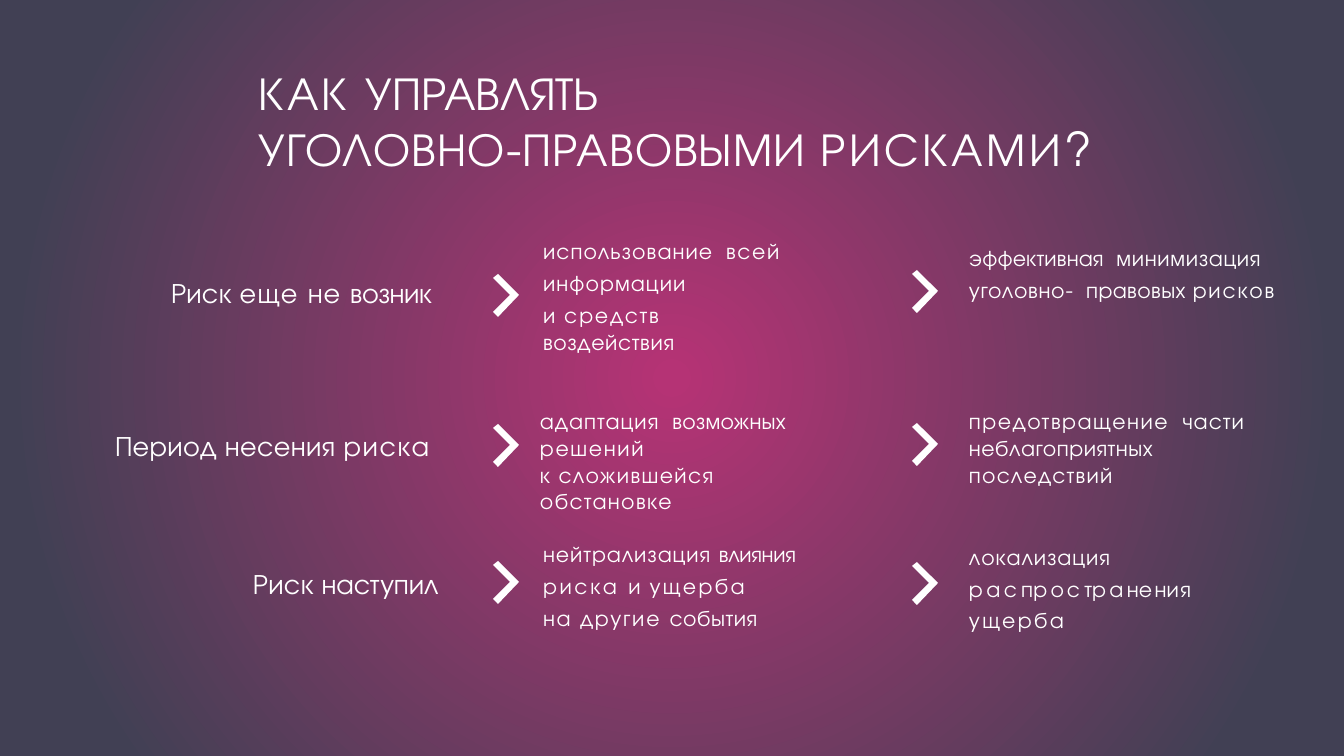
from lxml import etree
from pptx import Presentation
from pptx import util as u
from pptx.dml.color import RGBColor
from pptx.enum import text
from pptx.oxml.ns import qn

WHITE = RGBColor(0xFF, 0xFF, 0xFF)
MAGENTA = RGBColor(0xB5, 0x33, 0x75)
SLATE = RGBColor(0x41, 0x40, 0x54)
FONT = "TeX Gyre Adventor"
PX_PER_INCH = 100.8
CHEVRON = [(5, 0), (26, 21), (5, 43), (0, 38), (17, 21), (0, 4)]
GAP = (" ", 4.5)  # one wide space
BR = ("\n", 0)


def px(n):
    return u.Emu(round(n * 914400 / PX_PER_INCH))


class RiskSlide:
    def __init__(self, prs):
        self.slide = prs.slides.add_slide(prs.slide_layouts[5])

    def background(self, center, edge):
        """Radial gradient from the middle of the slide outwards."""
        fill = self.slide.background.fill
        fill.gradient()
        for stop, color, pos in zip(fill.gradient_stops, (center, edge), (0.01, 0.86)):
            stop.color.rgb = color
            stop.position = pos
        grad = self.slide._element.find(".//" + qn("a:gradFill"))
        grad.remove(grad.find(qn("a:lin")))
        circle = etree.SubElement(grad, qn("a:path"), path="circle")
        etree.SubElement(circle, qn("a:fillToRect"), l="50000", t="50000", r="50000", b="50000")

    def title(self, x, y, w, h, runs):
        sp = self.slide.shapes.title
        sp.left, sp.top, sp.width, sp.height = px(x), px(y), px(w), px(h)
        self.fill_frame(sp.text_frame, [runs], 33.3)

    def text(self, x, y, w, h, paragraphs, size=16, spacing=1.0):
        sp = self.slide.shapes.add_textbox(px(x), px(y), px(w), px(h))
        self.fill_frame(sp.text_frame, paragraphs, size, spacing)

    def fill_frame(self, tf, paragraphs, size, spacing=1.0):
        """Fill a frame; a run is (text, letter spacing in points).

        Only the first paragraph takes the wider line spacing."""
        tf.word_wrap = True
        tf.auto_size = text.MSO_AUTO_SIZE.NONE
        tf.vertical_anchor = text.MSO_ANCHOR.TOP
        tf.margin_left = tf.margin_top = tf.margin_right = tf.margin_bottom = 0
        for i, runs in enumerate(paragraphs):
            p = tf.add_paragraph() if i else tf.paragraphs[0]
            p.alignment = text.PP_ALIGN.LEFT
            p.line_spacing = 1.0 if i else spacing
            p.space_before = u.Pt(4 if i and spacing > 1 else 0)
            for words, tracking in runs:
                if words == "\n":
                    p.add_line_break()
                    continue
                r = p.add_run()
                r.text = words
                r.font.name, r.font.size = FONT, u.Pt(size)
                r.font.color.rgb = WHITE
                r._r.get_or_add_rPr().set("spc", str(round(tracking * 100)))

    def chevron(self, x, y):
        points = [(px(x + dx), px(y + dy)) for dx, dy in CHEVRON]
        builder = self.slide.shapes.build_freeform(*points[0])
        builder.add_line_segments(points[1:], close=True)
        sp = builder.convert_to_shape()
        sp.shadow.inherit = False
        sp.fill.solid()
        sp.fill.fore_color.rgb = WHITE
        sp.line.fill.background()


def main():
    prs = Presentation()
    prs.slide_width, prs.slide_height = px(1344), px(756)
    s = RiskSlide(prs)
    s.background(MAGENTA, SLATE)
    s.title(259, 64, 967, 114, [
        ("КАК ", 1.9), ("УПРАВЛЯТЬ", 0), BR,
        ("УГОЛОВНО-ПРАВОВЫМИ ", 0.8), ("РИСКАМИ?", 2.4)])

    stages = [
        (171, 276, [("Риск ", 0.1), ("еще ", 0.9), ("не ", 0.7), ("возник", -0.3)]),
        (115, 429, [("Период несения ", 0.2), ("риска", 1.1)]),
        (253, 567, [("Риск ", 0.1), ("наступил", -0.1)]),
    ]
    for x, y, runs in stages:
        s.text(x, y, 350, 35, [runs], size=20)

    for x, tops in ((493, (274, 424, 561)), (912, (270, 423, 562))):
        for y in tops:
            s.chevron(x, y)

    measures = [
        (543, 233, 1.17, [
            [("использование", 0.8), GAP, ("всей", 1.1), BR, ("информации", 0.8)],
            [("и ", 1), ("средств", 1.3), BR, ("воздействия", 0.5)]]),
        (540, 407, 1.0, [
            [("адаптация", 0.8), GAP, ("возможных", 0.2), BR, ("решений", 1.2)],
            [("к ", 0.8), ("сложившейся", 1), BR, ("обстановке", 1)]]),
        (543, 536, 1.17, [
            [("нейтрализация ", 0.7), ("влияния", -0.2), BR,
             ("риска ", 1.9), ("и ", 1), ("ущерба", 1.7)],
            [("на ", 1.2), ("другие ", 1.3), ("события", 0.4)]]),
    ]
    results = [
        (969, 240, 1.17, [
            [("эффективная", 0.1), GAP, ("минимизация", 0.5), BR,
             ("уголовно-", 0.5), GAP, ("правовых ", 0.3), ("рисков", 1.3)]]),
        (969, 407, 1.0, [
            [("предотвращение", 1.1), GAP, ("части", 0.8), BR,
             ("неблагоприятных", 0.4), BR, ("последствий", 0.9)]]),
        (969, 539, 1.17, [
            [("локализация", 0.7), BR,
             ("ра", 2.5), ("с", 2.9), ("п", 0.1), ("р", 2.5), ("о", 2), ("с", 2.9),
             ("т", -1.9), ("ра", 2.5), ("н", -0.2), ("е", 1.9), ("н", -0.2),
             ("и", 1), ("я", -0.5), BR, ("ущерба", 1.7)]]),
    ]
    for x, y, spacing, paragraphs in measures + results:
        s.text(x, y, 340, 96, paragraphs, spacing=spacing)

    prs.save("out.pptx")


if __name__ == "__main__":
    main()
